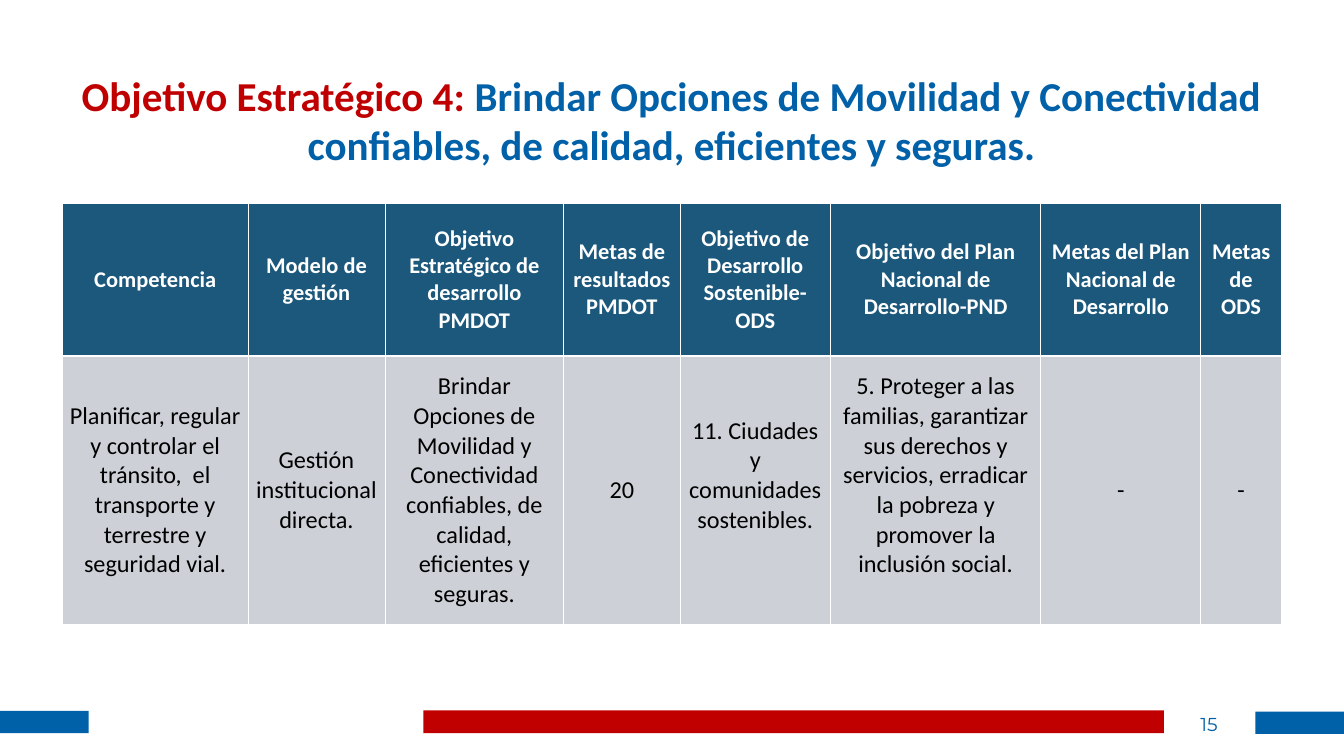
import pptx
import pptx.util
import pptx.dml.color
import pptx.enum.shapes
import pptx.enum.text
import pptx.oxml
import pptx.oxml.ns

Inches = pptx.util.Inches
Pt = pptx.util.Pt
MIDDLE = pptx.enum.text.MSO_ANCHOR.MIDDLE
CENTER = pptx.enum.text.PP_ALIGN.CENTER

COLORS = {
    "red": "C00000",
    "blue": "0060A8",
    "header": "1B587C",
    "body": "CDD1D7",
    "white": "FFFFFF",
    "black": "000000",
}

COLUMNS = [
    (2.76, "Competencia",
     "Planificar, regular y controlar el tránsito,  el transporte y terrestre y seguridad vial."),
    (2.04, "Modelo de gestión", "Gestión institucional directa."),
    (2.66, "Objetivo Estratégico de desarrollo PMDOT",
     "Brindar Opciones de Movilidad y Conectividad confiables, de calidad, eficientes y seguras."),
    (1.73, "Metas de resultados PMDOT", "20"),
    (2.24, "Objetivo de Desarrollo Sostenible- ODS", "11. Ciudades y comunidades sostenibles."),
    (3.13, "Objetivo del Plan Nacional de Desarrollo-PND",
     "5. Proteger a las familias, garantizar sus derechos y servicios, erradicar la pobreza "
     "y promover la inclusión social."),
    (2.38, "Metas del Plan Nacional de Desarrollo", "-"),
    (1.2, "Metas de ODS", "-"),
]
RAISED_COLUMNS = (4, 5)

HEADER = {"fill": "header", "bottom": 3,
          "font": {"name": "Calibri", "size": Pt(24), "bold": True}, "color": "white"}
BODY = {"fill": "body", "bottom": 1,
        "font": {"name": "Calibri", "size": Pt(26), "bold": False}, "color": "black"}
TITLE_FONT = {"name": "Calibri", "size": Pt(44), "bold": True}
NUMBER_FONT = {"name": "Montserrat", "size": Pt(20), "bold": False}


def rgb(color):
    return pptx.dml.color.RGBColor.from_string(COLORS[color])


def add_run(paragraph, text, font, color):
    paragraph.alignment = CENTER
    run = paragraph.add_run()
    run.text = text
    for attribute, value in font.items():
        setattr(run.font, attribute, value)
    run.font.color.rgb = rgb(color)


def add_text(slide, box, runs, font):
    frame = slide.shapes.add_textbox(*map(Inches, box)).text_frame
    settings = {
        "word_wrap": True, "vertical_anchor": MIDDLE,
        "margin_left": Inches(0.18), "margin_right": Inches(0.18),
        "margin_top": Inches(0.09), "margin_bottom": Inches(0.09),
    }
    for attribute, value in settings.items():
        setattr(frame, attribute, value)
    for text, color in runs:
        add_run(frame.paragraphs[0], text, font, color)


def add_footer(slide, box):
    left, top, width, height = box
    end_width = 1.32
    bars = [
        (left + 6.3, top, 11.02, height + 0.01, "red"),
        (left, top + 0.01, end_width, height, "blue"),
        (left + width - end_width, top + 0.02, end_width, height, "blue"),
    ]
    for *bar_box, color in bars:
        bar = slide.shapes.add_shape(
            pptx.enum.shapes.MSO_SHAPE.RECTANGLE, *map(Inches, bar_box))
        bar.shadow.inherit = False
        bar.fill.solid()
        bar.fill.fore_color.rgb = rgb(color)
        bar.line.fill.background()
    add_text(slide, (left + 17.52, top - 0.1, 0.94, 0.6), [("15", "blue")], NUMBER_FONT)


def add_border(cell, side, points):
    cell.fill.background()
    properties = cell._tc.get_or_add_tcPr()
    cell_fill = properties.find(pptx.oxml.ns.qn("a:noFill"))
    cell_fill.addprevious(pptx.oxml.parse_xml(
        f'<a:ln{side} {pptx.oxml.ns.nsdecls("a")} w="{Pt(points)}">'
        f'<a:solidFill><a:srgbClr val="{COLORS["white"]}"/></a:solidFill></a:ln{side}>'))


def fill_cell(cell, text, style, top_border):
    borders = {"L": 1, "R": 1, "T": top_border, "B": style["bottom"]}
    for side, points in borders.items():
        add_border(cell, side, points)
    cell.fill.solid()
    cell.fill.fore_color.rgb = rgb(style["fill"])
    cell.vertical_anchor = MIDDLE
    add_run(cell.text_frame.paragraphs[0], text, style["font"], style["color"])


def add_objectives(slide, box):
    table = slide.shapes.add_table(2, len(COLUMNS), *map(Inches, box)).table
    header_height = 2.28
    table.rows[0].height = Inches(header_height)
    table.rows[1].height = Inches(box[3] - header_height)
    for index, (width, heading, content) in enumerate(COLUMNS):
        table.columns[index].width = Inches(width)
        fill_cell(table.cell(0, index), heading, HEADER, 1)
        fill_cell(table.cell(1, index), content, BODY, HEADER["bottom"])
    for index in RAISED_COLUMNS:
        table.cell(1, index).margin_bottom = Inches(0.49)


def main():
    presentation = pptx.Presentation()
    presentation.slide_width = Inches(20)
    presentation.slide_height = Inches(11.25)
    slide = presentation.slides.add_slide(presentation.slide_layouts[6])
    add_footer(slide, (0, 10.57, 20, 0.33))
    add_text(slide, (0, 1.1, 20, 1.36), [
        ("Objetivo Estratégico 4: ", "red"),
        ("Brindar Opciones de Movilidad y Conectividad confiables, de calidad, "
         "eficientes y seguras.", "blue"),
    ], TITLE_FONT)
    add_objectives(slide, (0.93, 3.02, 18.13, 6.27))
    presentation.save("out.pptx")


if __name__ == "__main__":
    main()
